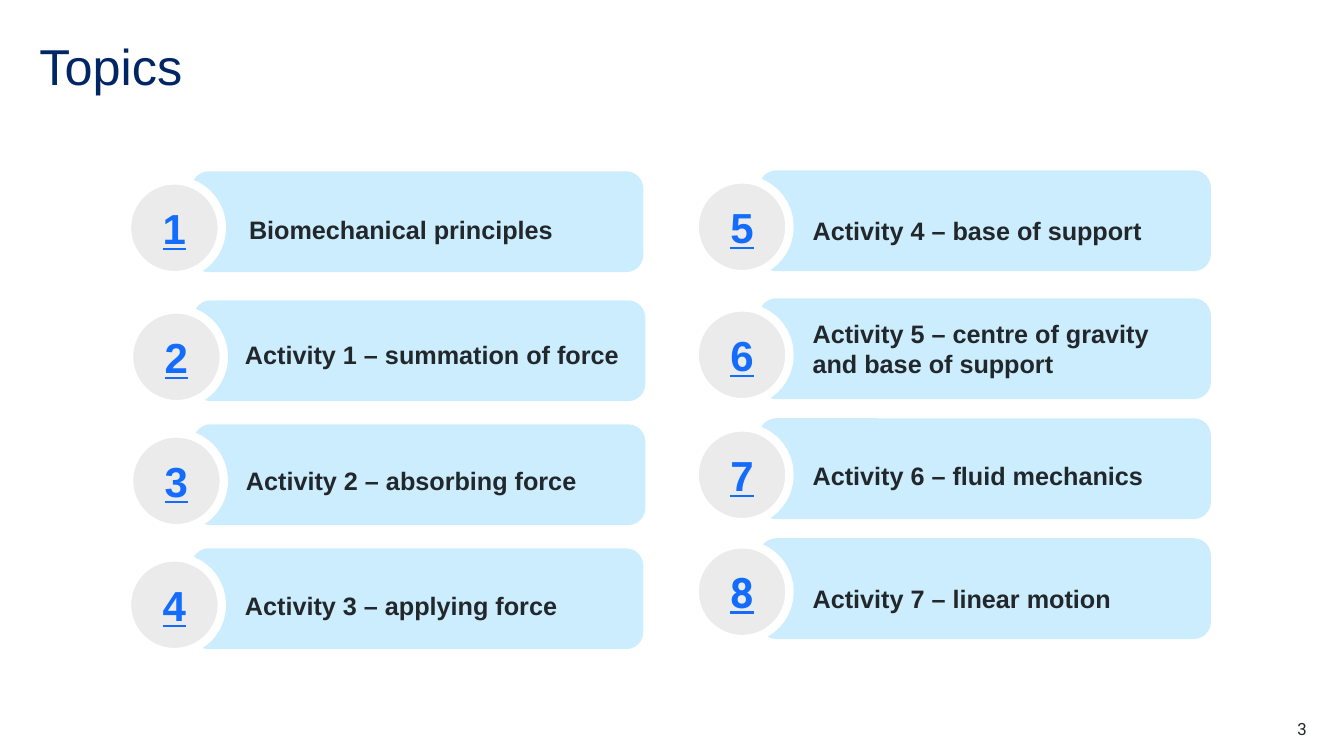
from dataclasses import dataclass

from pptx import Presentation, util as u
from pptx.dml.color import RGBColor
from pptx.enum import shapes, text

PX = 9144  # EMU in one px, 100 px to the inch
COLORS = {
    "navy": "002664",
    "ink": "22272B",
    "link": "146CFD",
    "card": "CBEDFD",
    "badge": "EBEBEB",
    "white": "FFFFFF",
}
CARD_WIDTH, CARD_HEIGHT = 448, 100
BADGE_SIZE, BADGE_SHIFT = 94, 64


@dataclass(frozen=True)
class Topic:
    number: int
    label: str
    left: int
    top: int
    label_left: int
    label_top: int
    label_width: int = 363
    label_height: int = 40
    spacing: float = 1.5
    badge_drop: int = 9
    badge_font: str = "Arial"


TOPICS = [
    Topic(1, "Biomechanical principles", 190, 170, 247, 198),
    Topic(2, "Activity 1 – summation of force", 192, 298, 243, 322, label_width=378),
    Topic(3, "Activity 2 – absorbing force", 192, 421, 244, 447),
    Topic(4, "Activity 3 – applying force", 190, 544, 243, 571),
    Topic(5, "Activity 4 – base of support", 753, 169, 806, 199),
    Topic(6, "Activity 5 – centre of gravity and base of support", 753, 296, 806, 316,
          label_height=61, spacing=1.0),
    Topic(7, "Activity 6 – fluid mechanics", 753, 415, 806, 442),
    Topic(8, "Activity 7 – linear motion", 753, 534, 806, 564,
          badge_drop=6, badge_font="Roboto"),
]


def px(*lengths: int) -> list[int]:
    return [length * PX for length in lengths]


def color(name: str) -> RGBColor:
    return RGBColor.from_string(COLORS[name])


def write(shape, words: str, *, size: int, ink: str, font: str = "Arial",
          bold: bool = False, underline: bool = False, inset: int = 0,
          align=text.PP_ALIGN.LEFT, anchor=text.MSO_ANCHOR.TOP,
          spacing: float = 1.0, fit=text.MSO_AUTO_SIZE.NONE) -> None:
    frame = shape.text_frame
    frame.word_wrap = True
    frame.auto_size = fit
    frame.vertical_anchor = anchor
    frame.margin_left = frame.margin_right = inset * PX
    frame.margin_top = frame.margin_bottom = inset * PX // 2
    para = frame.paragraphs[0]
    para.alignment = align
    para.line_spacing = spacing
    span = para.add_run()
    span.text = words
    span.font.name = font
    span.font.size = u.Pt(size)
    span.font.bold = bold
    span.font.underline = underline
    span.font.color.rgb = color(ink)


def add_filled(group, kind, fill: str, left: int, top: int, width: int, height: int):
    shape = group.shapes.add_shape(kind, *px(left, top, width, height))
    shape.shadow.inherit = False
    shape.fill.solid()
    shape.fill.fore_color.rgb = color(fill)
    shape.line.fill.background()
    return shape


def add_topic(page, topic: Topic) -> None:
    group = page.shapes.add_group_shape()

    # Card
    card = add_filled(group, shapes.MSO_SHAPE.ROUNDED_RECTANGLE, "card",
                      topic.left, topic.top, CARD_WIDTH, CARD_HEIGHT)
    card.adjustments[0] = 0.17

    # Numbered badge
    badge = add_filled(group, shapes.MSO_SHAPE.OVAL, "badge", topic.left - BADGE_SHIFT,
                       topic.top + topic.badge_drop, BADGE_SIZE, BADGE_SIZE)
    badge.line.color.rgb = color("white")
    badge.line.width = u.Pt(6)
    write(badge, str(topic.number), size=30, ink="link", font=topic.badge_font,
          bold=True, underline=True, inset=10,
          align=text.PP_ALIGN.CENTER, anchor=text.MSO_ANCHOR.MIDDLE)

    # Label
    label = add_filled(group, shapes.MSO_SHAPE.RECTANGLE, "card", topic.label_left,
                       topic.label_top, topic.label_width, topic.label_height)
    write(label, topic.label, size=18, ink="ink", bold=True, spacing=topic.spacing,
          fit=text.MSO_AUTO_SIZE.SHAPE_TO_FIT_TEXT)


def main() -> None:
    deck = Presentation()
    deck.slide_width, deck.slide_height = px(1333, 750)
    page = deck.slides.add_slide(deck.slide_layouts.get_by_name("Title Only"))

    # Title
    title = page.shapes.title
    title.left, title.top, title.width, title.height = px(39, 39, 1256, 60)
    write(title, "Topics", size=36, ink="navy", spacing=0.9,
          anchor=text.MSO_ANCHOR.MIDDLE)

    # Topics
    for topic in TOPICS:
        add_topic(page, topic)

    # Page number
    box = page.shapes.add_textbox(*px(1217, 713, 79, 20))
    write(box, "3", size=12, ink="ink", font="Roboto", align=text.PP_ALIGN.RIGHT)

    deck.save("out.pptx")


if __name__ == "__main__":
    main()
